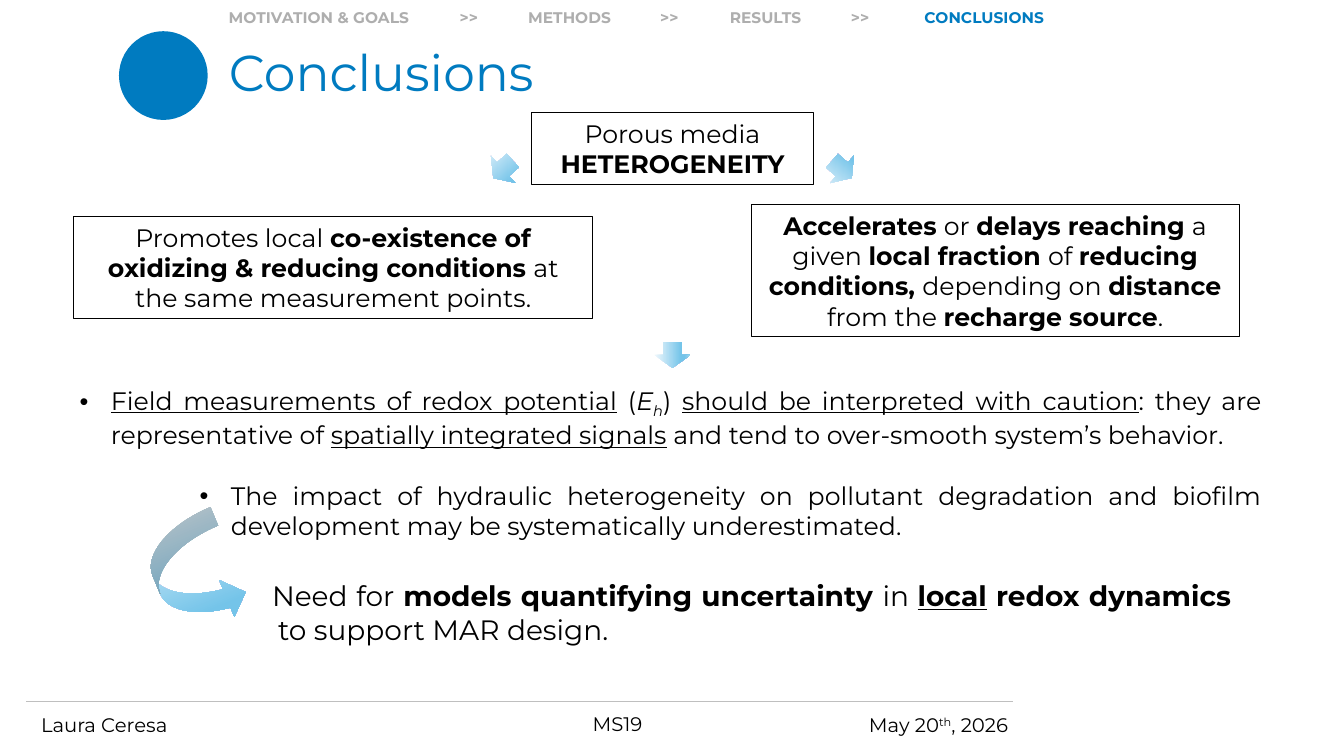
"""Build the conclusions slide of a talk on redox heterogeneity."""
from dataclasses import dataclass

from lxml.etree import SubElement
from pptx import Presentation
from pptx.dml.color import RGBColor
from pptx.enum.shapes import MSO_CONNECTOR, MSO_SHAPE
from pptx.enum.text import MSO_ANCHOR, MSO_AUTO_SIZE, PP_ALIGN
from pptx.oxml.ns import qn
from pptx.shapes.autoshape import Shape
from pptx.slide import Slide
from pptx.text.text import TextFrame
from pptx.util import Emu, Pt

EMU_PER_PX = 9144


@dataclass(frozen=True)
class Theme:
    font: str = "Montserrat"
    ink: str = "000000"
    accent: str = "007BC0"
    muted: str = "AEAEAE"
    rule: str = "BFBFBF"
    gradient: tuple[tuple[int, str], ...] = (
        (0, "F0F8FD"), (74, "74C4E9"), (83, "74C4E9"), (100, "A2D8F0"))
    title_size: int = 36
    need_size: int = 20
    body_size: int = 18
    footer_size: int = 14
    nav_size: int = 11


THEME = Theme()


@dataclass(frozen=True)
class Frame:
    left: int
    top: int
    width: int
    height: int

    def emu(self) -> tuple[Emu, Emu, Emu, Emu]:
        """Return the frame in EMU."""
        return px(self.left), px(self.top), px(self.width), px(self.height)


@dataclass(frozen=True)
class Span:
    text: str
    bold: bool = False
    italic: bool = False
    underline: bool = False
    baseline: int = 0


@dataclass(frozen=True)
class Para:
    spans: tuple[Span, ...]
    size: int
    color: str = THEME.ink
    bold: bool = False
    align: PP_ALIGN = PP_ALIGN.LEFT
    margin: int = 0
    indent: int = 0
    bullet: bool = False
    before: int = 0
    spacing: float = 1.0


@dataclass(frozen=True)
class Label:
    frame: Frame
    para: Para


@dataclass(frozen=True)
class Arrow:
    frame: Frame
    rotation: float
    kind: MSO_SHAPE = MSO_SHAPE.RIGHT_ARROW


def px(length: int) -> Emu:
    """Turn px into EMU."""
    return Emu(length * EMU_PER_PX)


def nav(left: int, width: int, text: str, color: str = THEME.muted) -> Label:
    """Describe one entry of the navigation bar."""
    para = Para((Span(text),), THEME.nav_size, color, bold=True)
    return Label(Frame(left, 3, width, 29), para)


def footer(left: int, top: int, width: int, *spans: Span) -> Label:
    """Describe one footer entry."""
    return Label(Frame(left, top, width, 34), Para(spans, THEME.footer_size))


def finding(frame: Frame, *spans: Span) -> Label:
    """Describe one outlined box."""
    return Label(frame, Para(spans, THEME.body_size, align=PP_ALIGN.CENTER))


TITLE = Label(Frame(217, 43, 1052, 81), Para(
    (Span("Conclusions"),), THEME.title_size, THEME.accent, spacing=0.9))

NAVIGATION = [
    nav(217, 244, "MOTIVATION & GOALS"),
    nav(514, 244, "METHODS"),
    nav(714, 244, "RESULTS"),
    nav(907, 244, "CONCLUSIONS", THEME.accent),
    *(nav(left, 44, ">>") for left in (446, 645, 834)),
]

FOOTERS = [
    footer(31, 702, 173, Span("Laura Ceresa")),
    footer(578, 701, 165, Span("MS19")),
    footer(852, 702, 165, Span("May 20"), Span("th", baseline=30), Span(", 2026")),
]

FINDINGS = [
    finding(Frame(527, 112, 280, 71),
            Span("Porous media "), Span("HETEROGENEITY", bold=True)),
    finding(Frame(73, 215, 515, 101),
            Span("Promotes local "),
            Span("co-existence of oxidizing & reducing conditions ", bold=True),
            Span("at the same measurement points.")),
    finding(Frame(745, 203, 484, 131),
            Span("Accelerates ", bold=True), Span("or "),
            Span("delays reaching ", bold=True), Span("a given "),
            Span("local fraction ", bold=True), Span("of "),
            Span("reducing conditions, ", bold=True), Span("depending on "),
            Span("distance ", bold=True), Span("from the "),
            Span("recharge source", bold=True), Span(".")),
]

IMPLICATIONS_FRAME = Frame(69, 377, 1192, 162)
IMPLICATIONS = [
    Para((Span("Field measurements of redox potential", underline=True),
          Span(" ("), Span("E", italic=True), Span("h", italic=True, baseline=-25),
          Span(") "), Span("should be interpreted with caution", underline=True),
          Span(": they are representative of "),
          Span("spatially integrated signals", underline=True),
          Span(" and tend to over-smooth system’s behavior.")),
         THEME.body_size, align=PP_ALIGN.JUSTIFY, margin=31, indent=-31, bullet=True),
    Para((Span("The impact of hydraulic heterogeneity on pollutant degradation and "
               "biofilm development may be systematically underestimated."),),
         THEME.body_size, align=PP_ALIGN.JUSTIFY, margin=150, indent=-31,
         bullet=True, before=22),
]

NEED = Label(Frame(235, 569, 996, 77), Para(
    (Span("Need for "), Span("models quantifying uncertainty ", bold=True),
     Span("in "), Span("local", bold=True, underline=True),
     Span(" redox dynamics ", bold=True), Span("to support MAR design.")),
    THEME.need_size, align=PP_ALIGN.JUSTIFY, margin=31, indent=-6))

ARROWS = [
    Arrow(Frame(486, 150, 26, 36), 318),
    Arrow(Frame(822, 150, 26, 36), 221),
    Arrow(Frame(654, 334, 26, 36), 270),
    Arrow(Frame(154, 514, 79, 111), 337.5, MSO_SHAPE.CURVED_LEFT_ARROW),
]


def write(text_frame: TextFrame, paras: list[Para],
          anchor: MSO_ANCHOR = MSO_ANCHOR.TOP) -> None:
    """Fill a text frame with formatted paragraphs."""
    text_frame.word_wrap = True
    text_frame.auto_size = MSO_AUTO_SIZE.NONE
    text_frame.vertical_anchor = anchor
    for index, para in enumerate(paras):
        paragraph = text_frame.add_paragraph() if index else text_frame.paragraphs[0]
        paragraph.alignment = para.align
        paragraph.line_spacing = para.spacing
        paragraph.space_before = Pt(para.before)
        properties = paragraph._p.get_or_add_pPr()
        properties.set("marL", str(px(para.margin)))
        properties.set("indent", str(px(para.indent)))
        if para.bullet:
            SubElement(properties, qn("a:buFont"), typeface="Arial")
            SubElement(properties, qn("a:buChar"), char="•")
        paragraph.font.name = THEME.font
        paragraph.font.size = Pt(para.size)
        paragraph.font.bold = para.bold
        paragraph.font.color.rgb = RGBColor.from_string(para.color)
        for span in para.spans:
            run = paragraph.add_run()
            run.text = span.text
            run.font.bold = span.bold or None
            run.font.italic = span.italic or None
            run.font.underline = span.underline or None
            if span.baseline:
                run._r.get_or_add_rPr().set("baseline", str(span.baseline * 1000))


def fill_placeholder(shape: Shape, frame: Frame, paras: list[Para]) -> None:
    """Move a placeholder and write its text."""
    shape.left, shape.top, shape.width, shape.height = frame.emu()
    write(shape.text_frame, paras)


def draw_label(slide: Slide, label: Label) -> None:
    """Draw a plain text box."""
    box = slide.shapes.add_textbox(*label.frame.emu())
    write(box.text_frame, [label.para])


def draw_finding(slide: Slide, label: Label) -> None:
    """Draw an outlined box with centred text."""
    box = slide.shapes.add_shape(MSO_SHAPE.RECTANGLE, *label.frame.emu())
    box.shadow.inherit = False
    box.fill.background()
    box.line.color.rgb = RGBColor.from_string(THEME.ink)
    box.line.width = Pt(0.75)
    write(box.text_frame, [label.para], MSO_ANCHOR.MIDDLE)


def draw_arrow(slide: Slide, arrow: Arrow) -> None:
    """Draw a mirrored block arrow with a gradient."""
    shape = slide.shapes.add_shape(arrow.kind, *arrow.frame.emu())
    shape.rotation = arrow.rotation
    properties = shape._element.spPr
    properties.find(qn("a:xfrm")).set("flipH", "1")
    gradient = SubElement(properties, qn("a:gradFill"), rotWithShape="1")
    stops = SubElement(gradient, qn("a:gsLst"))
    for position, color in THEME.gradient:
        stop = SubElement(stops, qn("a:gs"), pos=str(position * 1000))
        SubElement(stop, qn("a:srgbClr"), val=color)
    SubElement(gradient, qn("a:lin"), ang="5400000", scaled="0")
    shape.line.fill.background()
    shape.shadow.inherit = False


def draw_backdrop(slide: Slide) -> None:
    """Draw the footer rule and the title disc."""
    rule = slide.shapes.add_connector(
        MSO_CONNECTOR.STRAIGHT, px(26), px(696), px(1005), px(696))
    rule.line.color.rgb = RGBColor.from_string(THEME.rule)
    rule.line.width = Pt(0.5)
    SubElement(rule._element.spPr, qn("a:effectLst"))
    disc = slide.shapes.add_shape(MSO_SHAPE.OVAL, *Frame(118, 31, 88, 88).emu())
    disc.shadow.inherit = False
    disc.fill.solid()
    disc.fill.fore_color.rgb = RGBColor.from_string(THEME.accent)
    disc.line.fill.background()


def main() -> None:
    """Build and save the deck."""
    deck = Presentation()
    deck.slide_width, deck.slide_height = px(1333), px(750)
    slide = deck.slides.add_slide(deck.slide_layouts[1])
    fill_placeholder(slide.shapes.title, TITLE.frame, [TITLE.para])
    fill_placeholder(slide.placeholders[1], IMPLICATIONS_FRAME, IMPLICATIONS)
    draw_backdrop(slide)
    for label in [*FOOTERS, *NAVIGATION, NEED]:
        draw_label(slide, label)
    for label in FINDINGS:
        draw_finding(slide, label)
    for arrow in ARROWS:
        draw_arrow(slide, arrow)
    deck.save("out.pptx")


if __name__ == "__main__":
    main()
